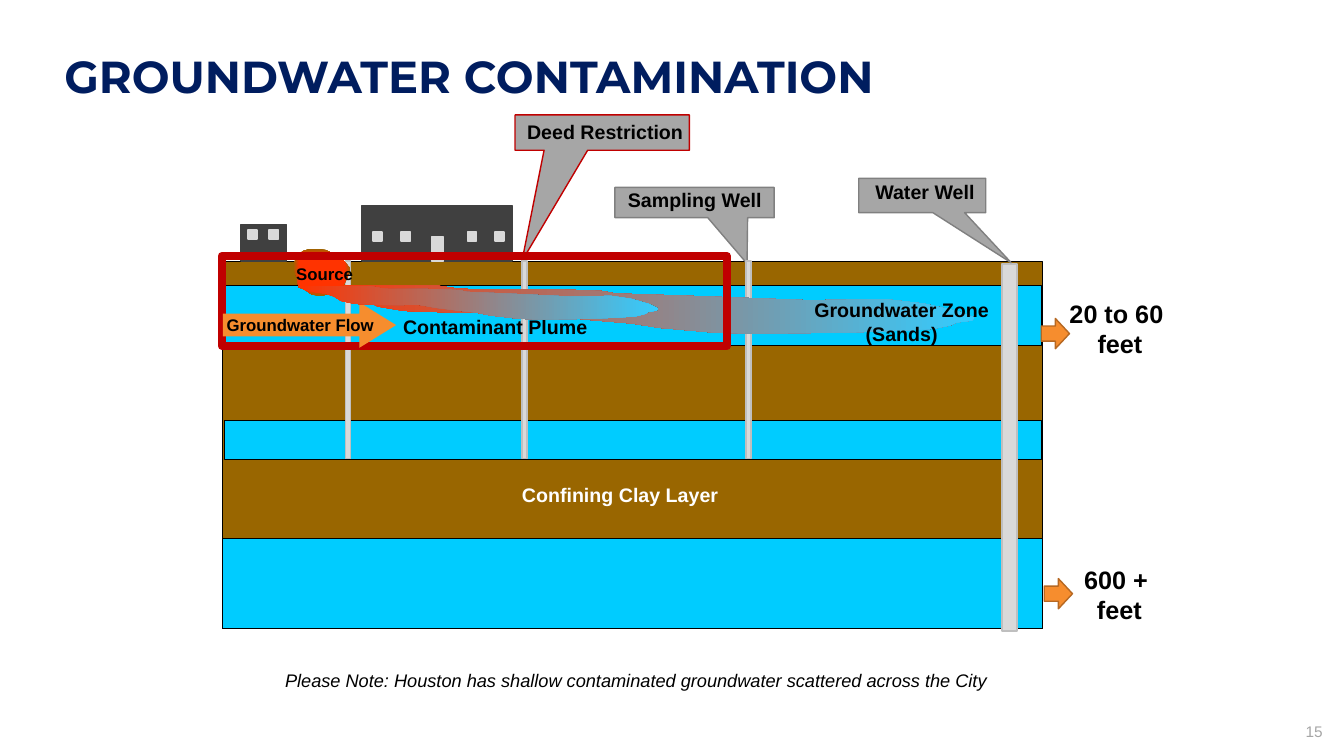
from lxml import etree
from pptx import Presentation
from pptx import util as u
from pptx.dml.color import RGBColor
from pptx.enum import shapes, text
from pptx.oxml.ns import qn

# ---- Content: lengths are columns and rows of a grid with ten cells per inch ----
COLORS = dict(navy="001D5F", black="000000", white="FFFFFF", clay="996600",
              water="00CCFF", wall="404040", pale="D9D9D9", silver="BFBFBF",
              gray="A6A6A6", slate="808080", red="C00000", orange="F68D2E",
              rust="B66822", spill="FF3300", plume="33CCFF")
COLUMNS, ROWS = 133.33, 75

TITLE = "GROUNDWATER CONTAMINATION"
NOTE = "Please Note: Houston has shallow contaminated groundwater scattered across the City"
PAGE_NUMBER = "15"

EARTH = (22.1, 25.9, 81.3, 36.5)
UPPER_AQUIFERS = [(22, 28.3, 81.3, 6), (22.3, 41.7, 81, 3.9)]
LOWER_AQUIFER = (22.1, 53.4, 81.3, 9)
WATER_WELL = (99.4, 26.2, 1.5, 36.4)

BUILDINGS = [(35.9, 20.4, 14.9, 5.5), (23.9, 22.3, 4.5, 3.6)]
WINDOW = 0.9
WINDOW_ROWS = [(23, [37, 39.8, 46.4, 49.1]), (22.8, [24.6, 26.7])]
DOOR = (42.8, 23.5, 1.2, 2.4)

# box, tail position, outline colour, label, label box
CALLOUTS = [
    ((61, 18.6, 15.8, 3), (0.33, 2.02), "slate", "Sampling Well", (61.3, 18.2, 16.9, 3.4)),
    ((85.2, 17.7, 12.6, 3.4), (0.7, 1.96), "slate", "Water Well", (85.85, 17.4, 19.3, 3.4)),
    ((51.1, 11.4, 17.3, 3.5), (-0.46, 3.64), "red", "Deed Restriction", (51.3, 11.4, 20.5, 3.4)),
]
# arrow corner, label lines, label box
DEPTHS = [
    ((103.3, 31.6), ["20 to 60 ", "feet"], (104.5, 29.1, 13.2, 7.1)),
    ((103.6, 57.4), ["600 + ", "feet"], (105.3, 55.5, 11.5, 7.1)),
]
SAMPLING_WELLS = [34.3, 51.8, 74]

LONG_PLUME = (29.7, 28.3, 67, 4.8)
SHORT_PLUME = (29.7, 28.4, 35.6, 3.3)
# outlines in percent of their box
PLUME_OUTLINE = [
    (0, 0), (1.3, 11), (3.7, 17), (7.5, 23), (9.7, 31), (11.6, 44), (15.5, 53),
    (24, 57), (33.4, 56), (38.1, 65), (44, 73), (49.3, 79), (53.3, 88), (61.6, 98),
    (67, 100), (80.7, 98), (89.3, 94), (93.9, 90), (96.4, 83), (97.3, 77),
    (99.6, 73), (100, 67), (97.6, 54), (92.5, 38), (86.9, 29), (75.3, 31),
    (63.9, 25), (55.7, 21), (46.7, 17), (44.9, 12), (41.3, 10), (35.1, 8),
    (25.2, 8), (23, 6), (20.1, 0)]
SOURCE = (29.1, 24.7, 5.7, 4.7)
SOURCE_OUTLINE = [
    (10, 11), (5, 19), (2, 28), (0, 42), (7, 62), (8, 74), (10, 81), (19, 85),
    (32, 96), (49, 100), (66, 92), (86, 79), (91, 68), (97, 53), (100, 42),
    (91, 30), (85, 20), (77, 13), (67, 9), (56, 2), (42, 0), (28, 0), (18, 4)]

RESTRICTED_AREA = (22, 25.4, 50.1, 8.9)
FLOW_ARROW = (22.1, 30, 17.2, 4.5)

# ---- Helpers ----
deck = Presentation()
cell = u.Inches(0.1)
deck.slide_width, deck.slide_height = int(COLUMNS * cell), ROWS * cell
page = deck.slides.add_slide(deck.slide_layouts[6])
KIND = shapes.MSO_SHAPE
CENTER, RIGHT = text.PP_ALIGN.CENTER, text.PP_ALIGN.RIGHT


def emu(lengths):
    return [int(length * cell) for length in lengths]


def rgb(name):
    return RGBColor.from_string(COLORS[name])


def draw(place, fill=None, line=None, width=1, kind=KIND.RECTANGLE, adjust=()):
    shape = page.shapes.add_shape(kind, *emu(place))
    shape.shadow.inherit = False
    for number, value in enumerate(adjust):
        shape.adjustments[number] = value
    if fill:
        shape.fill.solid()
        shape.fill.fore_color.rgb = rgb(fill)
    else:
        shape.fill.background()
    if line:
        shape.line.color.rgb = rgb(line)
        shape.line.width = u.Pt(width)
    else:
        shape.line.fill.background()
    return shape


def write(lines, place=None, box=None, size=14, color="black", font="Arial", bold=True,
          italic=False, align=None, spacing=None, wrap=True):
    box = box or page.shapes.add_textbox(*emu(place))
    frame = box.text_frame
    frame.word_wrap = wrap
    for number, line in enumerate([lines] if isinstance(lines, str) else lines):
        para = frame.add_paragraph() if number else frame.paragraphs[0]
        para.alignment, para.line_spacing = align, spacing
        span = para.add_run()
        span.text = line
        span.font.name, span.font.size = font, u.Pt(size)
        span.font.bold, span.font.italic = bold, italic
        span.font.color.rgb = rgb(color)


def outline(place, percents, stops):
    left, top, width, height = place
    points = [emu((left + width * x / 100, top + height * y / 100)) for x, y in percents]
    builder = page.shapes.build_freeform(*points[0])
    builder.add_line_segments(points[1:])
    shape = builder.convert_to_shape()
    shape.shadow.inherit = False
    shape.line.fill.background()
    shape.fill.gradient()
    shape.fill.gradient_angle = 0
    for stop, (position, color) in zip(shape.fill.gradient_stops, stops):
        stop.position, stop.color.rgb = position, rgb(color)
    return shape


# ---- Ground layers ----
write(PAGE_NUMBER, (92, 71.1, 40.2, 2.9), size=11, color="gray", bold=False, align=RIGHT)
draw(EARTH, "clay", "black", 0.75)
for aquifer in UPPER_AQUIFERS:
    draw(aquifer, "water", "black", 0.75)
write("Confining Clay Layer", (50.8, 47.4, 23.7, 3.4), color="white")

# ---- Buildings ----
for building in BUILDINGS:
    draw(building, "wall", "wall")
for top, lefts in WINDOW_ROWS:
    for left in lefts:
        draw((left, top, WINDOW, WINDOW), "pale", "pale")
draw(DOOR, "pale", "pale")

# ---- Deep aquifer, wells and callouts ----
draw(LOWER_AQUIFER, "water", "black", 0.75)
draw(WATER_WELL, "pale", "silver")
for place, tail, line, label, label_place in CALLOUTS:
    draw(place, "gray", line, kind=KIND.RECTANGULAR_CALLOUT, adjust=tail)
    write(label, label_place)
for corner, lines, label_place in DEPTHS:
    draw((*corner, 2.8, 3), "orange", "rust", kind=KIND.RIGHT_ARROW)
    write(lines, label_place, size=18, align=CENTER)
for left in SAMPLING_WELLS:
    draw((left, 25.9, 0.5, 19.6), "pale", "silver")

# ---- Contamination ----
plume_stops = [(0, "spill"), (1, "plume")]
outline(LONG_PLUME, PLUME_OUTLINE, plume_stops)
source = outline(SOURCE, SOURCE_OUTLINE, [(0.75, "spill"), (1, "clay")])
gradient = source.fill._xPr.find(qn("a:gradFill"))
gradient.remove(gradient.find(qn("a:lin")))
rings = etree.SubElement(gradient, qn("a:path"), {"path": "rect"})
etree.SubElement(rings, qn("a:fillToRect"), dict.fromkeys("ltrb", "50000"))
write("Source", (28.4, 25.7, 8.5, 3), size=12)
draw(RESTRICTED_AREA, line="red", width=6)
write(["Groundwater Zone", "(Sands)"], (78.2, 29.1, 22.5, 5.7), align=CENTER)
flow = draw(FLOW_ARROW, "orange", kind=KIND.RIGHT_ARROW, adjust=(0.5, 0.81))
flow.text_frame.vertical_anchor = text.MSO_ANCHOR.MIDDLE
write("Groundwater Flow", box=flow, size=12, align=CENTER, wrap=False)
write("Contaminant Plume", (39, 30.8, 22, 3.4))
outline(SHORT_PLUME, PLUME_OUTLINE, plume_stops)

# ---- Note and title ----
write(NOTE, (21.7, 65.9, 82.7, 3.2), size=13, bold=False, italic=True, align=CENTER)
write(TITLE, (5.4, 4.9, 122.4, 7.7), size=32, color="navy", font="Montserrat", spacing=0.9)

deck.save("out.pptx")
